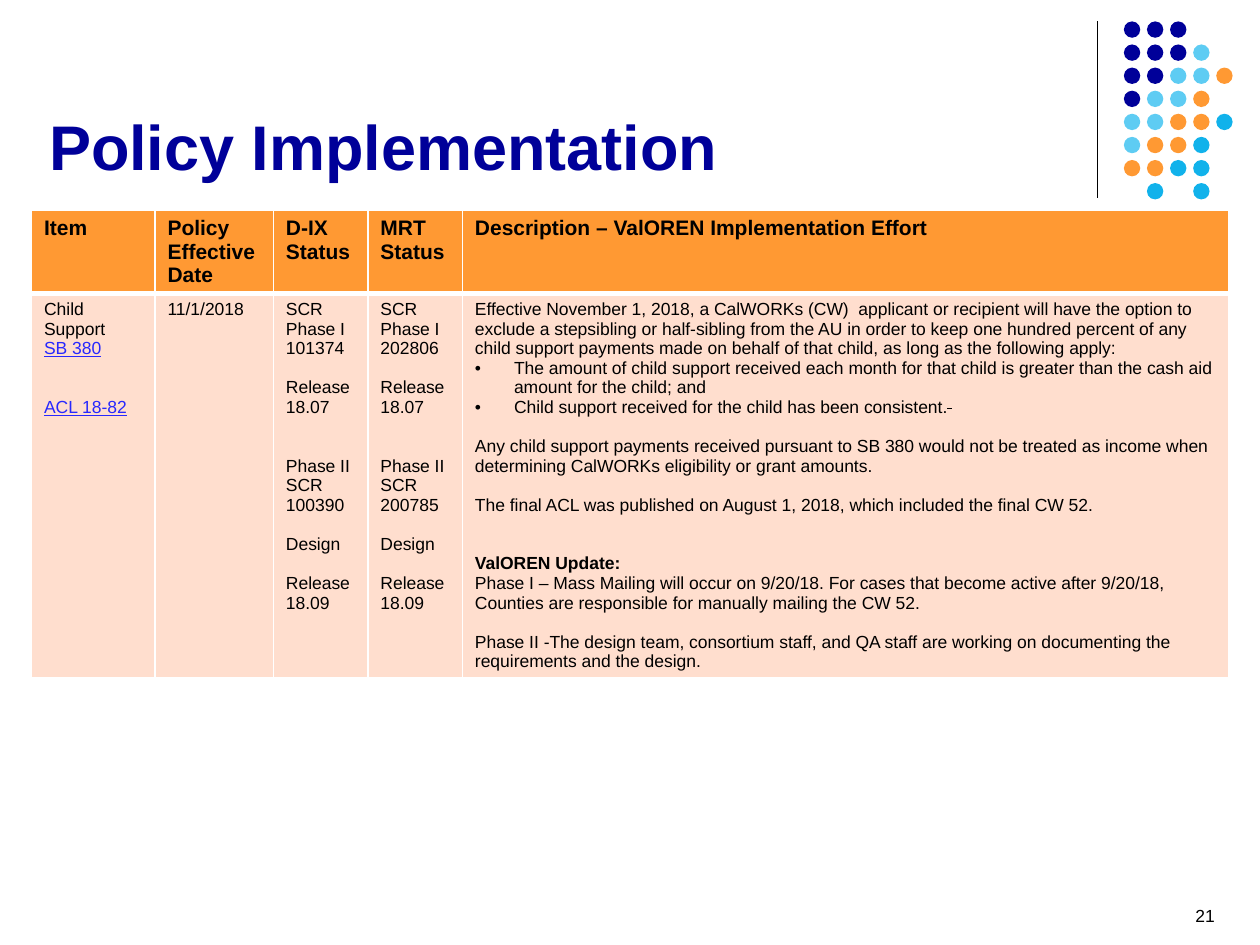
from lxml import etree
from pptx import Presentation
from pptx.dml.color import RGBColor
from pptx.enum.shapes import MSO_CONNECTOR, MSO_SHAPE
from pptx.enum.text import MSO_ANCHOR, PP_ALIGN
from pptx.oxml.ns import qn
from pptx.util import Inches, Pt

STRAIGHT = MSO_CONNECTOR.STRAIGHT
OVAL = MSO_SHAPE.OVAL
BOTTOM = MSO_ANCHOR.BOTTOM
LEFT, RIGHT = PP_ALIGN.LEFT, PP_ALIGN.RIGHT

BLACK = RGBColor(0, 0, 0)
WHITE = RGBColor(0xFF, 0xFF, 0xFF)
NAVY = RGBColor(0, 0, 0x99)
SKY = RGBColor(0x5E, 0xCC, 0xF3)
ORANGE = RGBColor(0xFF, 0x99, 0x33)
CYAN = RGBColor(0x11, 0xB2, 0xEB)
PEACH = RGBColor(0xFF, 0xDE, 0xCE)
LINK_BLUE = RGBColor(0x28, 0x28, 0xFE)

DOT_COLORS = {"N": NAVY, "S": SKY, "O": ORANGE, "C": CYAN}
DOT_ROWS = ["NNN", "NNNS", "NNSSO", "NSSO", "SSOOC", "SOOC", "OOCC", " C C"]
COLUMN_WIDTHS = [0.98, 0.94, 0.75, 0.75, 6.08]
ROW_HEIGHTS = [0.65, 3.05]
BODY_LINE = 11.2

HEADERS = ["Item", "Policy Effective Date", "D-IX Status", "MRT Status",
           "Description – ValOREN Implementation Effort"]
LINK = {"color": LINK_BLUE, "underline": True}
GAP = {"gap": 1}
WIDE_GAP = {"gap": 2}
BULLET = {"bullet": True}
RELEASES = [("Design", GAP), ("Release", GAP), ("18.09", {})]
BODY = [
    [("Child Support", {}), ("SB 380", LINK), ("ACL 18-82", {**LINK, **WIDE_GAP})],
    [("11/1/2018", {})],
    [("SCR", {}), ("Phase I 101374", {}), ("Release", GAP), ("18.07", {}),
     ("Phase II SCR", WIDE_GAP), ("100390", {}), *RELEASES],
    [("SCR", {}), ("Phase I", {}), ("202806", {}), ("Release", GAP), ("18.07", {}),
     ("Phase II", WIDE_GAP), ("SCR", {}), ("200785", {}), *RELEASES],
    [("Effective November 1, 2018, a CalWORKs (CW)  applicant or recipient will have "
      "the option to exclude a stepsibling or half-sibling from the AU in order to keep "
      "one hundred percent of any child support payments made on behalf of that child, "
      "as long as the following apply:", {}),
     ("The amount of child support received each month for that child is greater than "
      "the cash aid amount for the child; and", BULLET),
     ("Child support received for the child has been consistent.",
      {**BULLET, "struck_tail": " "}),
     ("Any child support payments received pursuant to SB 380 would not be treated as "
      "income when determining CalWORKs eligibility or grant amounts.", GAP),
     ("The final ACL was published on August 1, 2018, which included the final CW 52.",
      GAP),
     ("ValOREN Update:", {**WIDE_GAP, "bold": True}),
     ("Phase I – Mass Mailing will occur on 9/20/18. For cases that become active after "
      "9/20/18, Counties are responsible for manually mailing the CW 52.", {}),
     ("Phase II -The design team, consortium staff, and QA staff are working on "
      "documenting the requirements and the design.", GAP)],
]


def write(frame, text, size=10, color=BLACK, bold=False, underline=False, align=LEFT,
          gap=0, bullet=False, struck_tail="", font="Arial"):
    para = frame.add_paragraph() if frame.text else frame.paragraphs[0]
    para.alignment = align
    para.space_before = Pt(gap * BODY_LINE)
    if bullet:
        properties = para._p.get_or_add_pPr()
        properties.set("marL", str(Inches(0.31)))
        properties.set("indent", str(-Inches(0.31)))
        etree.SubElement(properties, qn("a:buFont")).set("typeface", font)
        etree.SubElement(properties, qn("a:buChar")).set("char", "•")
    for words in filter(None, (text, struck_tail)):
        span = para.add_run()
        span.text = words
        span.font.name, span.font.size = font, Pt(size)
        span.font.bold, span.font.underline = bold, underline
        span.font.color.rgb = color
        if words == struck_tail:
            span.font._element.set("strike", "sngStrike")


class PolicyPage:
    def __init__(self, deck):
        self.page = deck.slides.add_slide(deck.slide_layouts[5])
        self.shapes = self.page.shapes

    def title(self, text, left, top, width, height):
        box = self.shapes.title
        box.left, box.top = Inches(left), Inches(top)
        box.width, box.height = Inches(width), Inches(height)
        box.text_frame.vertical_anchor = BOTTOM
        write(box.text_frame, text, size=36, color=NAVY, bold=True)

    def rule(self, x, top, bottom):
        line = self.shapes.add_connector(
            STRAIGHT, Inches(x), Inches(top), Inches(x), Inches(bottom))
        line.line.color.rgb = BLACK
        line.line.width = Pt(0.75)
        etree.SubElement(line._element.spPr, qn("a:effectLst"))

    def dots(self, rows, left, top, diameter, pitch):
        group = self.shapes.add_group_shape()
        for row, marks in enumerate(rows):
            for column, mark in enumerate(marks):
                if mark in DOT_COLORS:
                    dot = group.shapes.add_shape(
                        OVAL, Inches(left + column * pitch), Inches(top + row * pitch),
                        Inches(diameter), Inches(diameter))
                    dot.shadow.inherit = False
                    dot.fill.solid()
                    dot.fill.fore_color.rgb = DOT_COLORS[mark]
                    dot.line.fill.background()

    def style_cell(self, cell, fill, bottom_width=1):
        properties = cell._tc.get_or_add_tcPr()
        for side, width in (("L", 1), ("R", 1), ("T", 1), ("B", bottom_width)):
            border = etree.SubElement(properties, qn(f"a:ln{side}"), w=str(Pt(width)))
            paint = etree.SubElement(border, qn("a:solidFill"))
            etree.SubElement(paint, qn("a:srgbClr"), val=str(WHITE))
        cell.fill.solid()
        cell.fill.fore_color.rgb = fill

    def table(self, headers, body, left, top):
        table = self.shapes.add_table(
            2, len(headers), Inches(left), Inches(top),
            Inches(sum(COLUMN_WIDTHS)), Inches(sum(ROW_HEIGHTS))).table
        table.horz_banding = False
        for column, width in zip(table.columns, COLUMN_WIDTHS):
            column.width = Inches(width)
        for row, height in zip(table.rows, ROW_HEIGHTS):
            row.height = Inches(height)
        for column, (header, lines) in enumerate(zip(headers, body)):
            head, cell = table.cell(0, column), table.cell(1, column)
            self.style_cell(head, ORANGE, bottom_width=3)
            write(head.text_frame, header, size=12, bold=True)
            self.style_cell(cell, PEACH)
            for text, style in lines:
                write(cell.text_frame, text, **style)

    def text(self, text, left, top, width, height, **style):
        box = self.shapes.add_textbox(
            Inches(left), Inches(top), Inches(width), Inches(height))
        box.text_frame.word_wrap = True
        write(box.text_frame, text, **style)


def main():
    deck = Presentation()
    deck.slide_width, deck.slide_height = Inches(10), Inches(7.5)
    policy = PolicyPage(deck)
    policy.rule(8.71, 0.17, 1.57)
    policy.dots(DOT_ROWS, 8.92, 0.17, diameter=0.13, pitch=0.55 / 3)
    policy.title("Policy Implementation", 0.29, 0.83, 8.42, 0.67)
    policy.table(HEADERS, BODY, 0.25, 1.67)
    policy.text("21", 7.41, 7.13, 2.33, 0.33, align=RIGHT)
    deck.save("out.pptx")


if __name__ == "__main__":
    main()
